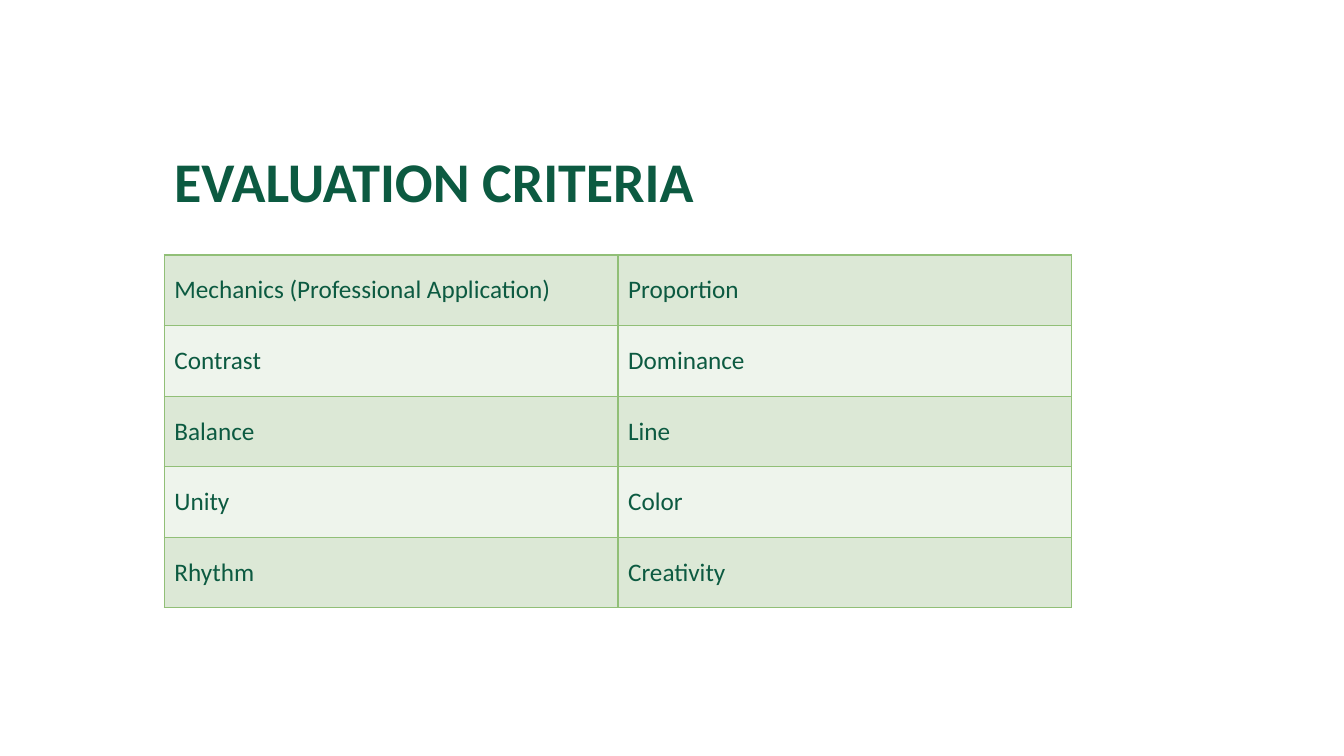
"""Build the evaluation criteria slide."""
from lxml import etree
from pptx import Presentation, util as u
from pptx.dml.color import RGBColor
from pptx.enum import text
from pptx.oxml.ns import qn

TITLE = "EVALUATION CRITERIA"
ROWS = [
    ("Mechanics (Professional Application)", "Proportion"),
    ("Contrast", "Dominance"),
    ("Balance", "Line"),
    ("Unity", "Color"),
    ("Rhythm", "Creativity"),
]
THEME = {
    "font": "Calibri", "ink": "0C5A41", "line": "91BF77",
    "bands": ("DCE8D6", "EEF4EC"), "title": 40, "body": 18, "rule": 1,
}
LEFT, COL, ROW = 1.63, 4.5, 0.7


def write(para, words, size, bold=False):
    run = para.add_run()
    run.text = words
    font = run.font
    font.name, font.size, font.bold = THEME["font"], u.Pt(size), bold
    font.color.rgb = RGBColor.from_string(THEME["ink"])


def border(cell):
    props = cell._tc.get_or_add_tcPr()
    for spot, side in enumerate(("lnL", "lnR", "lnT", "lnB")):
        line = etree.Element(qn("a:" + side), w=str(u.Pt(THEME["rule"])))
        fill = etree.SubElement(line, qn("a:solidFill"))
        etree.SubElement(fill, qn("a:srgbClr"), val=THEME["line"])
        props.insert(spot, line)


def main():
    deck = Presentation()
    deck.slide_width, deck.slide_height = u.Inches(13.33), u.Inches(7.5)
    slide = deck.slides.add_slide(deck.slide_layouts[6])

    box = slide.shapes.add_textbox(*map(u.Inches, (LEFT, 1.16, 10.07, 1.26)))
    frame = box.text_frame
    frame.word_wrap = True
    frame.vertical_anchor = text.MSO_ANCHOR.MIDDLE
    write(frame.paragraphs[0], TITLE, THEME["title"], True)

    high, wide = len(ROWS), len(ROWS[0])
    area = map(u.Inches, (LEFT, 2.53, COL * wide, ROW * high))
    table = slide.shapes.add_table(high, wide, *area).table
    table.first_row = table.horz_banding = False
    for r, row in enumerate(ROWS):
        for c, words in enumerate(row):
            cell = table.cell(r, c)
            cell.vertical_anchor = text.MSO_ANCHOR.MIDDLE
            cell.fill.solid()
            cell.fill.fore_color.rgb = RGBColor.from_string(THEME["bands"][r % 2])
            border(cell)
            write(cell.text_frame.paragraphs[0], words, THEME["body"])

    deck.save("out.pptx")


if __name__ == "__main__":
    main()
